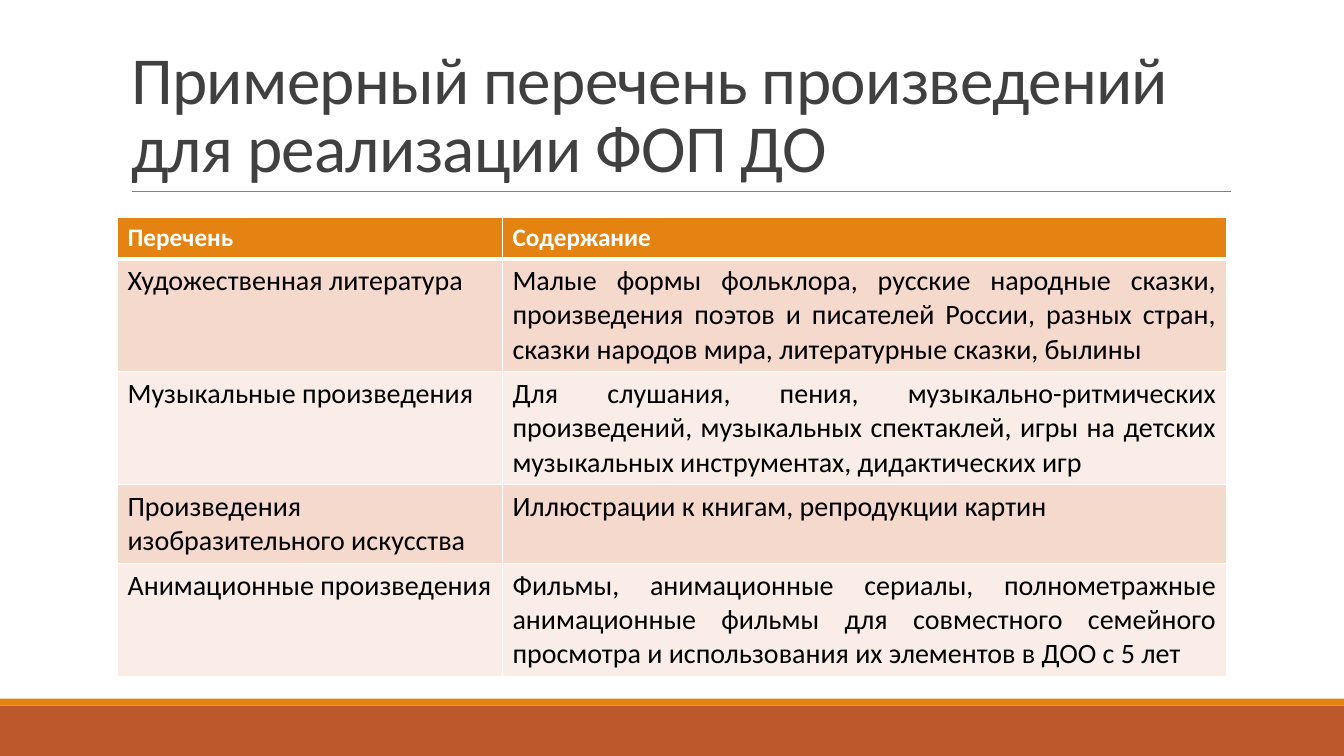
from lxml.etree import SubElement
from pptx import Presentation
from pptx.dml.color import RGBColor
from pptx.enum.shapes import MSO_CONNECTOR as CONN, MSO_SHAPE as SHAPE
from pptx.enum.text import MSO_ANCHOR as ANCHOR, MSO_AUTO_SIZE as AUTO, PP_ALIGN as ALIGN
from pptx.oxml.ns import qn
from pptx.util import Pt

COLORS = {
    "rust": "BD582C", "orange": "E48312", "rule": "808080", "title": "404040",
    "white": "FFFFFF", "black": "000000", "band_dark": "F5D9CC", "band_light": "FAEDE7",
}
ROWS = [
    ("Перечень", "Содержание"),
    ("Художественная литература",
     "Малые формы фольклора, русские народные сказки, произведения поэтов и писателей "
     "России, разных стран, сказки народов мира, литературные сказки, былины"),
    ("Музыкальные произведения",
     "Для слушания, пения, музыкально-ритмических произведений, музыкальных спектаклей, "
     "игры на детских музыкальных инструментах, дидактических игр"),
    ("Произведения изобразительного искусства",
     "Иллюстрации к книгам, репродукции картин"),
    ("Анимационные произведения",
     "Фильмы, анимационные сериалы, полнометражные анимационные фильмы для совместного "
     "семейного просмотра и использования их элементов в ДОО с 5 лет"),
]
COL_WIDTHS = [275, 517]
ROW_HEIGHTS = [29.2, 80.6, 80.6, 56, 80.6]


def add_text(p, text, size, color, bold=False):
    r = p.add_run()
    r.text = text
    r.font.name = "Calibri"
    r.font.size = Pt(size)
    r.font.bold = bold
    r.font.color.rgb = RGBColor.from_string(COLORS[color])
    return r


def set_border(cell, side, width):
    """Draw a white border on one side (L, R, T or B); call before filling the cell."""
    ln = SubElement(cell._tc.get_or_add_tcPr(), qn("a:ln" + side), w=str(Pt(width)))
    fill = SubElement(ln, qn("a:solidFill"))
    SubElement(fill, qn("a:srgbClr"), val=COLORS["white"])


prs = Presentation()
prs.slide_width, prs.slide_height = Pt(960), Pt(540)
s = prs.slides.add_slide(prs.slide_layouts[5])

# Footer bands
for top, height, color in [(504, 36, "rust"), (499, 5, "orange")]:
    sp = s.shapes.add_shape(SHAPE.RECTANGLE, 0, Pt(top), prs.slide_width, Pt(height))
    sp.shadow.inherit = False
    sp.fill.solid()
    sp.fill.fore_color.rgb = RGBColor.from_string(COLORS[color])
    sp.line.fill.background()

# Rule under the title
rule = s.shapes.add_connector(CONN.STRAIGHT, Pt(94), Pt(136.8), Pt(879), Pt(136.8))
rule.line.color.rgb = RGBColor.from_string(COLORS["rule"])
rule.line.width = Pt(0.5)
SubElement(rule._element.spPr, qn("a:effectLst"))

# Title
title = s.shapes.title
title.left, title.top, title.width, title.height = Pt(86.4), Pt(22.5), Pt(792), Pt(114.2)
tf = title.text_frame
tf.word_wrap = True
tf.auto_size = AUTO.NONE
tf.vertical_anchor = ANCHOR.BOTTOM
p = tf.paragraphs[0]
p.alignment = ALIGN.LEFT
p.line_spacing = 0.85
r = add_text(p, "Примерный перечень произведений для реализации ФОП ДО", 48, "title")
r.font._element.set("spc", "-50")

# Table
frame = s.shapes.add_table(len(ROWS), len(COL_WIDTHS), Pt(83.9), Pt(155.6),
                           Pt(sum(COL_WIDTHS)), Pt(sum(ROW_HEIGHTS)))
table = frame.table
for col, width in zip(table.columns, COL_WIDTHS):
    col.width = Pt(width)
for i, (texts, height) in enumerate(zip(ROWS, ROW_HEIGHTS)):
    table.rows[i].height = Pt(height)
    header = i == 0
    band = "orange" if header else "band_dark" if i % 2 else "band_light"
    for j, text in enumerate(texts):
        cell = table.cell(i, j)
        for side, width in [("L", 1), ("R", 1), ("T", 3 if i == 1 else 1), ("B", 3 if header else 1)]:
            set_border(cell, side, width)
        cell.fill.solid()
        cell.fill.fore_color.rgb = RGBColor.from_string(COLORS[band])
        p = cell.text_frame.paragraphs[0]
        p.alignment = ALIGN.JUSTIFY if j and not header else ALIGN.LEFT
        add_text(p, text, 18 if header else 20, "white" if header else "black", header)

prs.save("out.pptx")
